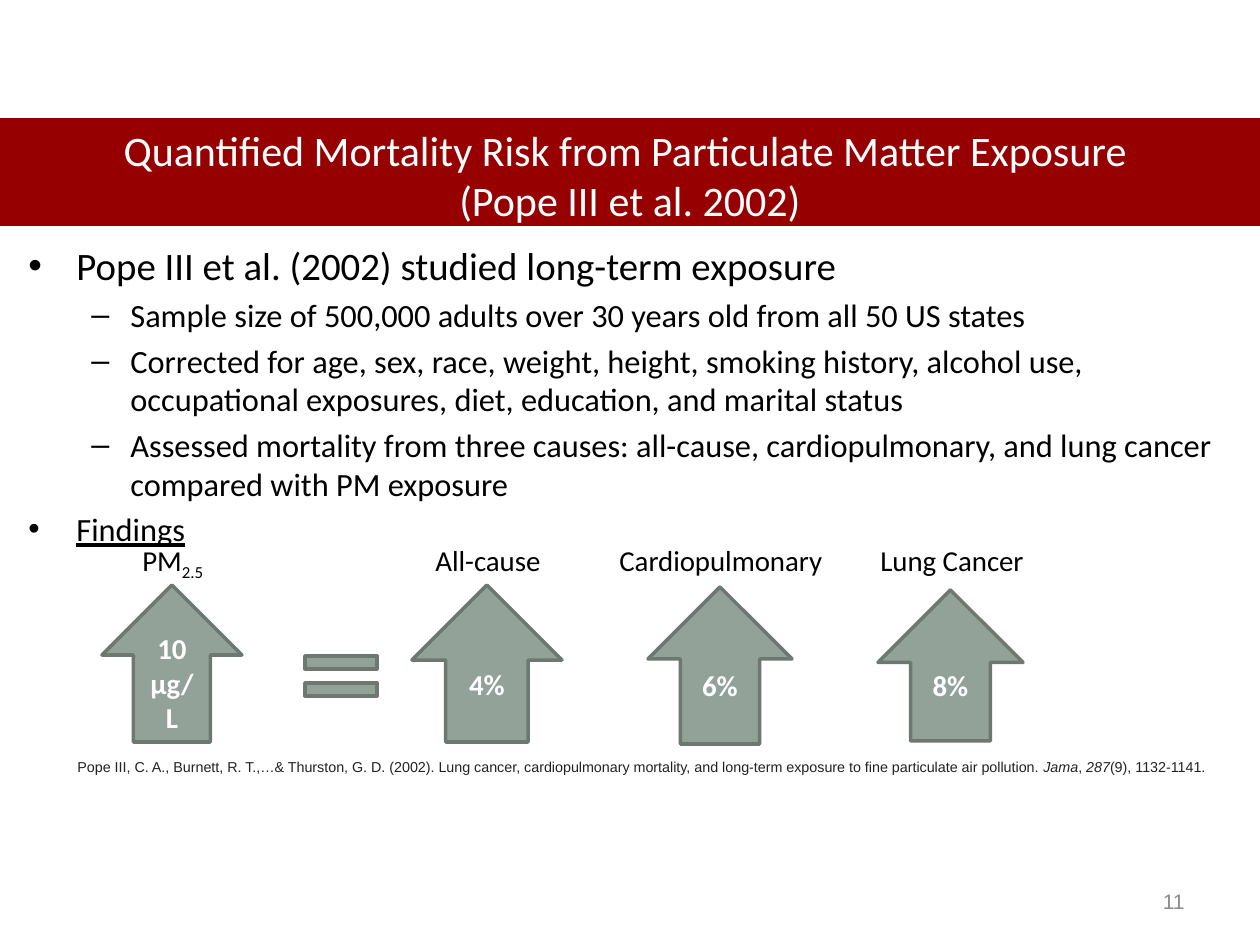
from lxml import etree
from pptx import Presentation, util as u
from pptx.dml.color import RGBColor
from pptx.enum import shapes, text
from pptx.oxml.ns import qn

# Content
TITLE = ["Quantified Mortality Risk from Particulate Matter Exposure ",
         "(Pope III et al. 2002)"]
BODY = [  # level, size, underline, words
    (0, 22.2, False, "Pope III et al. (2002) studied long-term exposure"),
    (1, 18.5, False, "Sample size of 500,000 adults over 30 years old from all 50 US states"),
    (1, 18.5, False, "Corrected for age, sex, race, weight, height, smoking history, alcohol use, "
                     "occupational exposures, diet, education, and marital status"),
    (1, 18.5, False, "Assessed mortality from three causes: all-cause, cardiopulmonary, "
                     "and lung cancer compared with PM exposure"),
    (0, 18.5, True, "Findings"),
]
LEVELS = [("•", 48, 48), ("–", 102, 39)]  # bullet, margin, hang
ARROWS = [  # value, arrow box, label, label left and width
    ("10 μg/L", (102, 585, 140, 157), "PM", 130, 91),
    ("4%", (412, 585, 150, 157), "All-cause", 423, 132),
    ("6%", (648, 587, 144, 157), "Cardiopulmonary", 607, 231),
    ("8%", (878, 590, 145, 151), "Lung Cancer", 868, 170),
]
CITE = [  # words, italic
    ("Pope III, C. A., Burnett, R. T.,…& Thurston, G. D. (2002). Lung cancer, "
     "cardiopulmonary mortality, and long-term exposure to fine particulate air pollution. ", False),
    ("Jama", True), (", ", False), ("287", True), ("(9), 1132-1141.", False),
]
RED, SAGE, EDGE, WHITE, BLACK = "960000", "93A299", "6D7871", "FFFFFF", "000000"
MID = text.PP_ALIGN.CENTER


def px(n):
    return u.Emu(round(n * 914400 / 126))


def color(code):
    return RGBColor.from_string(code)


def style(font, tint=BLACK, **form):
    for key, val in {"name": "Calibri", **form}.items():
        setattr(font, key, u.Pt(val) if key == "size" else val)
    font.color.rgb = color(tint)


def box(area, wrap=True):
    frame = slide.shapes.add_textbox(*map(px, area)).text_frame
    frame.word_wrap = wrap
    return frame


def block(kind, area, fill, edge=None):
    shape = slide.shapes.add_shape(kind, *map(px, area))
    shape.shadow.inherit = False
    shape.fill.solid()
    shape.fill.fore_color.rgb = color(fill)
    if edge:
        shape.line.color.rgb = color(edge)
        shape.line.width = u.Pt(2)
    else:
        shape.line.fill.background()
    return shape


def bullet(para, mark, left, hang):
    props = para._p.get_or_add_pPr()
    props.set("marL", str(px(left)))
    props.set("indent", str(-px(hang)))
    etree.SubElement(props, qn("a:buFont"), typeface="Arial")
    etree.SubElement(props, qn("a:buChar"), char=mark)


deck = Presentation()
deck.slide_width, deck.slide_height = px(1260), px(945)
slide = deck.slides.add_slide(deck.slide_layouts[6])

# Title band
frame = block(shapes.MSO_SHAPE.RECTANGLE, (0, 118, 1260, 108), RED).text_frame
frame.vertical_anchor = text.MSO_ANCHOR.TOP
para = frame.paragraphs[0]
para.text = "\n".join(TITLE)
para.alignment = MID
for run in para.runs:
    style(run.font, WHITE, size=24)

# Body bullets
frame = box((16, 236, 1242, 275))
for i, (level, size, under, words) in enumerate(BODY):
    para = frame.add_paragraph() if i else frame.paragraphs[0]
    para.level = level
    if i:
        para.space_before = u.Pt(size * 0.2)
    bullet(para, *LEVELS[level])
    run = para.add_run()
    run.text = words
    style(run.font, size=size, underline=under)

# Arrows and their labels
for value, area, label, left, width in ARROWS:
    arrow = block(shapes.MSO_SHAPE.UP_ARROW, area, SAGE, EDGE)
    arrow.adjustments[0] = 0.55
    arrow.adjustments[1] = 0.5
    frame = arrow.text_frame
    frame.word_wrap = True
    frame.vertical_anchor = text.MSO_ANCHOR.MIDDLE
    para = frame.paragraphs[0]
    para.text = value
    para.alignment = MID
    style(para.runs[0].font, WHITE, size=16.5, bold=True)

    para = box((left, 536, width, 48), wrap=False).paragraphs[0]
    para.text = label
    if label == "PM":
        sub = para.add_run()
        sub.text = "2.5"
        sub.font._element.set("baseline", "-25000")
    for run in para.runs:
        style(run.font, size=16.5)

# Equals sign
for top in (656, 683):
    block(shapes.MSO_SHAPE.RECTANGLE, (305, top, 72, 13), SAGE, EDGE)

# Citation
para = box((65, 752, 1176, 30)).paragraphs[0]
for words, slant in CITE:
    run = para.add_run()
    run.text = words
    style(run.font, "222222", name="Arial", size=8.2, italic=slant)

# Slide number
frame = box((903, 876, 294, 50))
frame.vertical_anchor = text.MSO_ANCHOR.MIDDLE
para = frame.paragraphs[0]
para.text = "11"
para.alignment = text.PP_ALIGN.RIGHT
style(para.runs[0].font, "8C8C8C", name="Arial", size=12)

deck.save("out.pptx")
